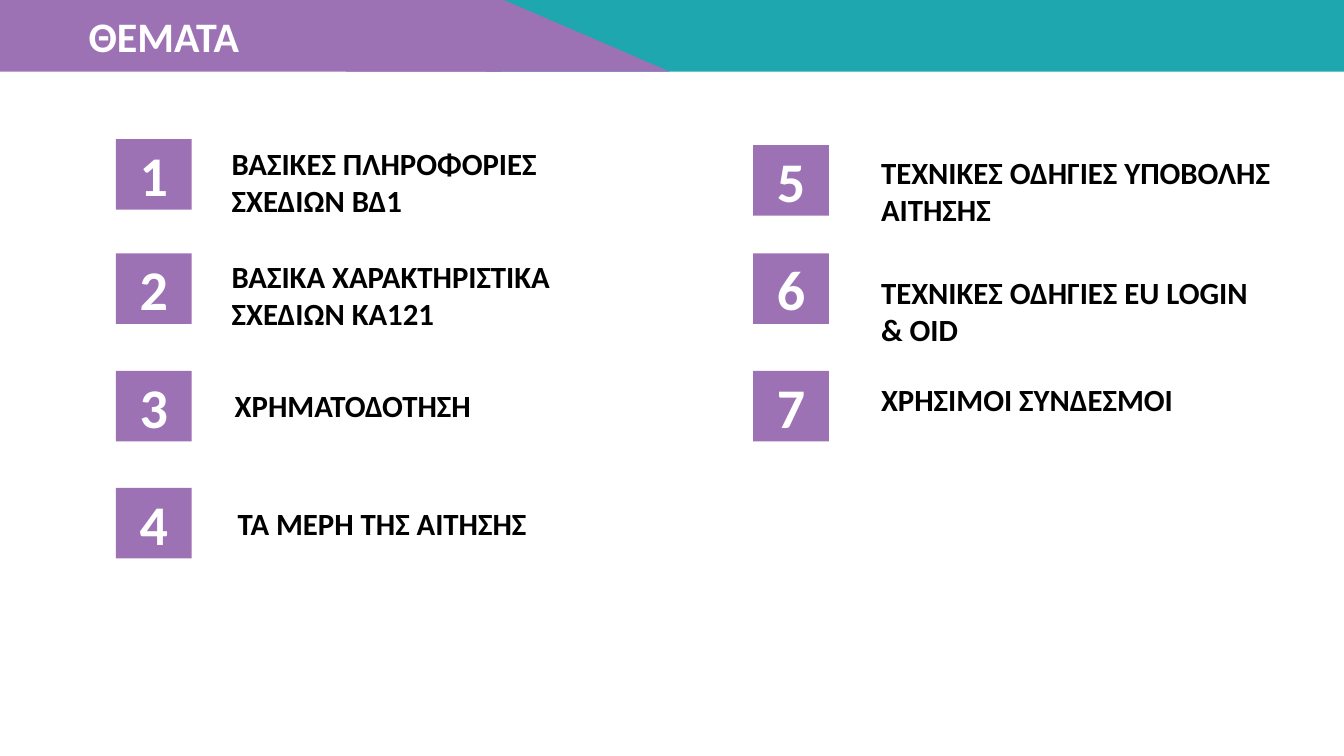
from dataclasses import dataclass

from pptx import Presentation
from pptx.dml.color import RGBColor as Color
from pptx.enum.shapes import MSO_SHAPE as Kind
from pptx.enum.text import MSO_ANCHOR as Anchor, MSO_AUTO_SIZE as Fit, PP_ALIGN as Align
from pptx.util import Inches, Pt


@dataclass(frozen=True)
class Theme:
    """Colours, font and type sizes of the slide."""
    teal: str = "1EA7AE"
    plum: str = "9D72B5"
    white: str = "FFFFFF"
    black: str = "000000"
    font: str = "Calibri"
    title: int = 30
    badge: int = 40
    label: int = 22


THEME = Theme()
WIDE, HIGH = Inches(13.33), Inches(7.5)
LEFT, RIGHT = 8.63, 56.04
BAND = 9.47
TOPICS = [
    (LEFT, 18.4, (16.5, 18.53, 46.89), True, "ΒΑΣΙΚΕΣ ΠΛΗΡΟΦΟΡΙΕΣ\nΣΧΕΔΙΩΝ ΒΔ1"),
    (LEFT, 33.5, (16.5, 33.5, 46.89), True, "ΒΑΣΙΚΑ ΧΑΡΑΚΤΗΡΙΣΤΙΚΑ\nΣΧΕΔΙΩΝ ΚΑ121"),
    (LEFT, 49.07, (16.73, 50.53, 19.28), False, "ΧΡΗΜΑΤΟΔΟΤΗΣΗ"),
    (LEFT, 64.53, (16.95, 66.13, 23.26), False, "ΤΑ ΜΕΡΗ ΤΗΣ ΑΙΤΗΣΗΣ"),
    (RIGHT, 19.2, (64.82, 19.73, 31.36), False, "ΤΕΧΝΙΚΕΣ ΟΔΗΓΙΕΣ ΥΠΟΒΟΛΗΣ\nΑΙΤΗΣΗΣ"),
    (RIGHT, 33.5, (64.82, 35.6, 29.63), False, "ΤΕΧΝΙΚΕΣ ΟΔΗΓΙΕΣ EU LOGIN\n& OID"),
    (RIGHT, 49.07, (64.82, 49.73, 23.48), False, "ΧΡΗΣΙΜΟΙ ΣΥΝΔΕΣΜΟΙ"),
]


def place(left, top, width, height):
    """Turn percentages of the slide into lengths."""
    sides = ((left, WIDE), (top, HIGH), (width, WIDE), (height, HIGH))
    return [round(part * full / 100) for part, full in sides]


def write(frame, text, size, color, align=Align.LEFT):
    """Fill a text frame with one bold paragraph per line."""
    frame.text = text
    for para in frame.paragraphs:
        para.alignment = align
        font = para.font
        font.name, font.size, font.bold = THEME.font, Pt(size), True
        font.color.rgb = Color.from_string(color)


def block(shapes, area, color, kind=Kind.RECTANGLE):
    """Add a plain filled shape."""
    shape = shapes.add_shape(kind, *place(*area))
    shape.shadow.inherit = False
    shape.fill.solid()
    shape.fill.fore_color.rgb = Color.from_string(color)
    shape.line.fill.background()
    return shape


def label(shapes, area, text, size, color, wrap=False):
    """Add a text box that grows with its text."""
    frame = shapes.add_textbox(*place(*area)).text_frame
    frame.word_wrap = wrap
    frame.auto_size = Fit.SHAPE_TO_FIT_TEXT
    write(frame, text, size, color)


def badge(shapes, left, top, number):
    """Add a numbered square."""
    frame = block(shapes, (left, top, 5.63, 9.33), THEME.plum).text_frame
    frame.vertical_anchor = Anchor.MIDDLE
    write(frame, str(number), THEME.badge, THEME.white, Align.CENTER)


def header(shapes):
    """Add the two-colour band and the slide title."""
    block(shapes, (36.16, 0, 63.84, BAND), THEME.teal)
    flag = shapes.add_group_shape().shapes
    block(flag, (0, 0, 37.36, BAND), THEME.plum)
    peak = block(flag, (25.73, 0, 24.08, BAND), THEME.plum, Kind.ISOSCELES_TRIANGLE)
    peak.adjustments[0] = 0.488
    label(shapes, (5.85, 0.67, 12.83, 8.13), "ΘΕΜΑΤΑ", THEME.title, THEME.white)


def main():
    """Build and save the topics slide."""
    deck = Presentation()
    deck.slide_width, deck.slide_height = WIDE, HIGH
    shapes = deck.slides.add_slide(deck.slide_layouts[6]).shapes
    header(shapes)
    for number, (left, top, spot, wrap, text) in enumerate(TOPICS, 1):
        badge(shapes, left, top, number)
        tall = 1.3 + 4.95 * len(text.splitlines())
        label(shapes, (*spot, tall), text, THEME.label, THEME.black, wrap)
    deck.save("out.pptx")


if __name__ == "__main__":
    main()
